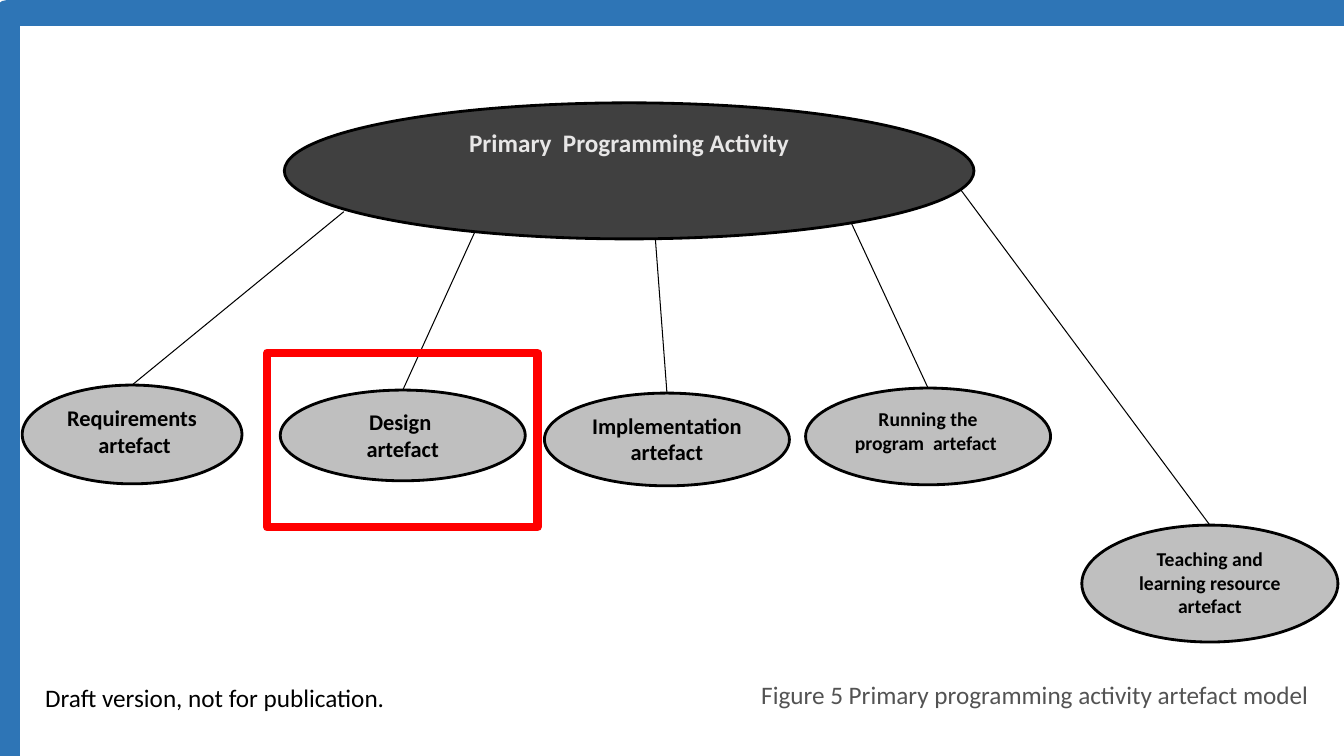
from lxml import etree
from pptx import Presentation
from pptx.dml.color import RGBColor
from pptx.enum.shapes import MSO_CONNECTOR, MSO_SHAPE
from pptx.enum.text import MSO_ANCHOR, PP_ALIGN
from pptx.oxml.ns import qn
from pptx.util import Inches, Pt

BLACK = RGBColor(0x00, 0x00, 0x00)
BLUE = RGBColor(0x2E, 0x75, 0xB6)
RED = RGBColor(0xFF, 0x00, 0x00)
DARK_GREY = RGBColor(0x40, 0x40, 0x40)
LIGHT_GREY = RGBColor(0xBF, 0xBF, 0xBF)
CAPTION_GREY = RGBColor(0x53, 0x53, 0x53)
PALE_GREY = RGBColor(0xE7, 0xE6, 0xE6)

RECTANGLE, ELLIPSE = MSO_SHAPE.RECTANGLE, MSO_SHAPE.OVAL
STRAIGHT = MSO_CONNECTOR.STRAIGHT
LEFT, CENTER = PP_ALIGN.LEFT, PP_ALIGN.CENTER
TOP = MSO_ANCHOR.TOP

TITLE_ONLY_LAYOUT = 5

# paragraphs, text size, ellipse (left, top, width, height), line start
ARTEFACTS = [
    (["Requirements", " artefact"], 16, (0.22, 3.82, 2.18, 0.98), (3.41, 2.1)),
    (["Design ", "artefact"], 16, (2.78, 3.87, 2.43, 0.9), (4.71, 2.3)),
    (["Implementation artefact"], 16, (5.4, 3.9, 2.43, 0.92), (6.5, 2.37)),
    (["Running the program  artefact "], 14, (7.99, 3.85, 2.43, 0.96), (8.41, 2.14)),
    (["Teaching and learning resource artefact"], 14, (10.73, 5.21, 2.54, 1.16),
     (9.46, 1.79)),
]


def inches(values):
    return [Inches(value) for value in values]


class ArtefactSlide:
    def __init__(self, slide, font="Calibri"):
        self.slide = slide
        self.font = font

    def add_text(self, frame, paragraphs, size=18, color=BLACK, bold=False,
                 align=LEFT, wrap=True):
        frame.word_wrap = wrap
        frame.vertical_anchor = TOP
        for index, text in enumerate(paragraphs):
            paragraph = frame.add_paragraph() if index else frame.paragraphs[0]
            paragraph.alignment = align
            run = paragraph.add_run()
            run.text = text
            run.font.name = self.font
            run.font.size = Pt(size)
            run.font.bold = bold
            run.font.color.rgb = color

    def caption(self, text, box):
        title = self.slide.shapes.title
        title.left, title.top, title.width, title.height = inches(box)
        frame = title.text_frame
        frame.margin_left = frame.margin_right = Inches(0.05)
        frame.margin_top = frame.margin_bottom = Inches(0.05)
        self.add_text(frame, [text], color=CAPTION_GREY)

    def label(self, text, box):
        textbox = self.slide.shapes.add_textbox(*inches(box))
        self.add_text(textbox.text_frame, [text], wrap=False)

    def outline(self, kind, box, color, width):
        shape = self.slide.shapes.add_shape(kind, *inches(box))
        shape.shadow.inherit = False
        shape.fill.background()
        shape.line.color.rgb = color
        shape.line.width = Pt(width)
        return shape

    def ellipse(self, paragraphs, box, fill, **text_format):
        shape = self.outline(ELLIPSE, box, BLACK, 2)
        shape.fill.solid()
        shape.fill.fore_color.rgb = fill
        self.add_text(shape.text_frame, paragraphs, bold=True, align=CENTER,
                      **text_format)

    def link(self, start, end):
        connector = self.slide.shapes.add_connector(STRAIGHT, *inches((*start, *end)))
        connector.line.color.rgb = BLACK
        connector.line.width = Pt(0.75)
        properties = connector._element.spPr
        etree.SubElement(properties, qn("a:effectLst"))


def main():
    presentation = Presentation()
    presentation.slide_width = Inches(13.33)
    presentation.slide_height = Inches(7.5)
    layout = presentation.slide_layouts[TITLE_ONLY_LAYOUT]
    diagram = ArtefactSlide(presentation.slides.add_slide(layout))

    diagram.outline(RECTANGLE, (0.07, 0.13, 13.39, 7.55), BLUE, 18)
    for paragraphs, size, box, start in ARTEFACTS:
        left, top, width, height = box
        diagram.link(start, (left + width / 2, top))
        diagram.ellipse(paragraphs, box, LIGHT_GREY, size=size)
    diagram.label("Draft version, not for publication.", (0.35, 6.72, 3.59, 0.4))
    diagram.outline(RECTANGLE, (2.65, 3.5, 2.68, 1.73), RED, 6)
    diagram.caption("Figure 5 Primary programming activity artefact model",
                    (7.5, 6.69, 5.77, 0.4))
    diagram.ellipse(["Primary  Programming Activity"], (2.82, 1.02, 6.84, 1.35),
                    DARK_GREY, color=PALE_GREY)

    presentation.save("out.pptx")


if __name__ == "__main__":
    main()
